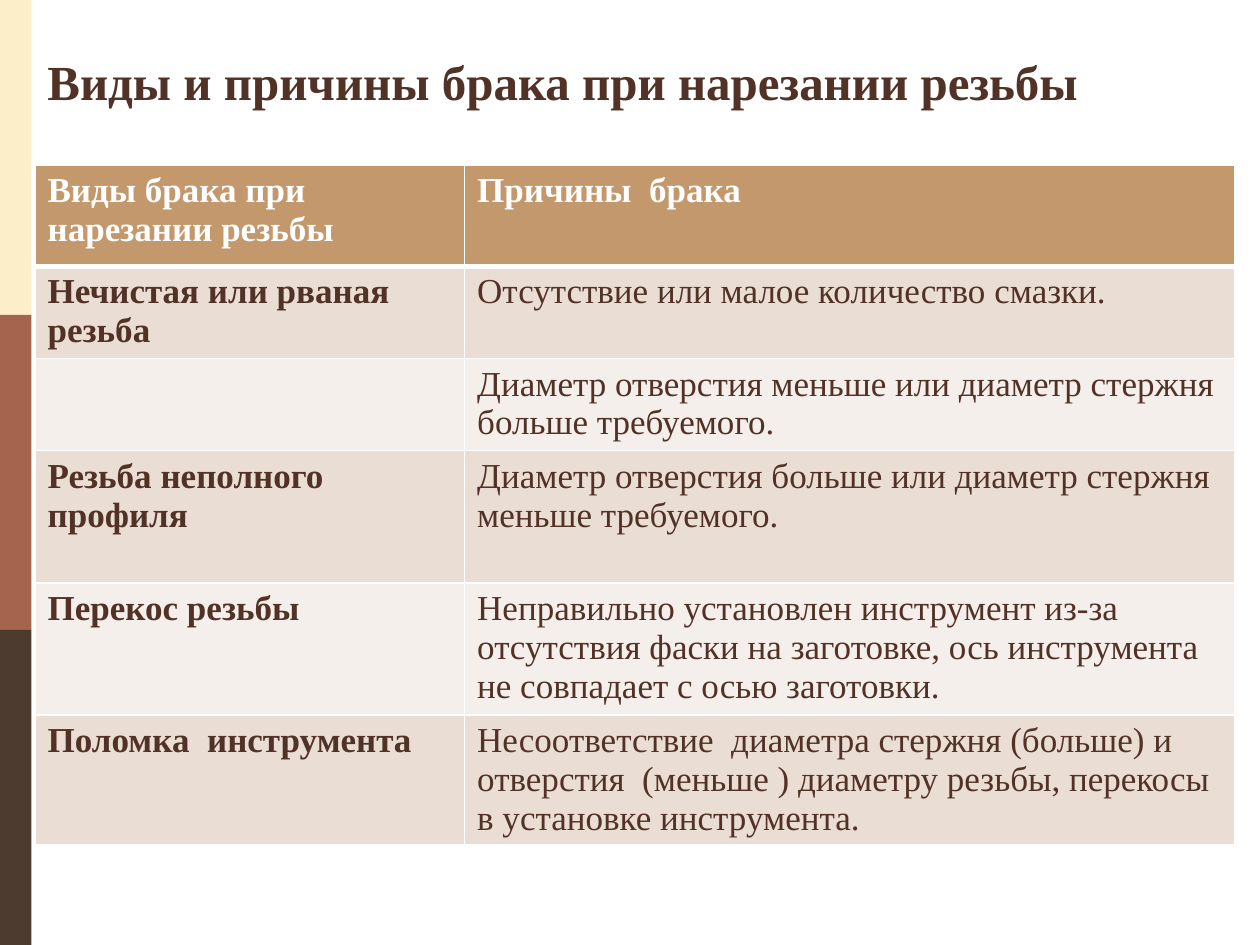
from dataclasses import dataclass

from lxml.etree import SubElement
from pptx import Presentation
from pptx.dml.color import RGBColor
from pptx.enum.shapes import MSO_SHAPE
from pptx.oxml.ns import qn
from pptx.util import Pt


@dataclass(frozen=True)
class Theme:
    """Colours, font and type sizes of the slide."""
    font: str = "Times New Roman"
    title_size: int = 28
    table_size: int = 20
    text: str = "523227"
    white: str = "FFFFFF"
    header: str = "C3986D"
    bands: tuple = ("E9DDD4", "F5EFEB")
    stripes: tuple = ("FBEEC9", "A5644E", "4E3B30")


THEME = Theme()
TITLE = "Виды и причины брака при нарезании резьбы"
COLUMN_WIDTHS = (245.5, 440)
ROW_HEIGHTS = (57.6, 52.7, 52.7, 75.6, 75.6, 73.6)
DEFECTS = (
    ("Виды брака при нарезании резьбы", "Причины  брака"),
    ("Нечистая или рваная резьба", "Отсутствие или малое количество смазки."),
    ("", "Диаметр отверстия меньше или диаметр стержня больше требуемого."),
    ("Резьба неполного профиля",
     "Диаметр отверстия больше или диаметр стержня меньше требуемого."),
    ("Перекос резьбы",
     "Неправильно установлен инструмент из-за отсутствия фаски на заготовке, "
     "ось инструмента не совпадает с осью заготовки."),
    ("Поломка  инструмента",
     "Несоответствие  диаметра стержня (больше) и отверстия  (меньше ) "
     "диаметру резьбы, перекосы в установке инструмента."),
)


def style_text(para, size, color, bold):
    """Set the font of a whole paragraph."""
    para.font.name = THEME.font
    para.font.size = Pt(size)
    para.font.bold = bold
    para.font.color.rgb = RGBColor.from_string(color)


def set_borders(cell, top, bottom):
    """Draw white borders around a cell, with given top and bottom widths."""
    properties = cell._tc.get_or_add_tcPr()
    for side, width in (("L", 1), ("R", 1), ("T", top), ("B", bottom)):
        line = SubElement(properties, qn(f"a:ln{side}"), w=str(Pt(width)))
        fill = SubElement(line, qn("a:solidFill"))
        SubElement(fill, qn("a:srgbClr"), val=THEME.white)


def add_stripes(page, left, top, width, height):
    """Stack equal colour blocks in the given box."""
    block = height / len(THEME.stripes)
    for index, color in enumerate(THEME.stripes):
        stripe = page.shapes.add_shape(
            MSO_SHAPE.RECTANGLE, Pt(left), Pt(top + index * block), Pt(width), Pt(block))
        stripe.shadow.inherit = False
        stripe.fill.solid()
        stripe.fill.fore_color.rgb = RGBColor.from_string(color)
        stripe.line.fill.background()


def add_title(page, left, top, width, height):
    """Place the slide title in the given box."""
    box = page.shapes.add_textbox(Pt(left), Pt(top), Pt(width), Pt(height))
    box.text_frame.word_wrap = True
    para = box.text_frame.paragraphs[0]
    para.text = TITLE
    style_text(para, THEME.title_size, THEME.text, True)


def add_defect_table(page, left, top):
    """Place the table of thread defects and their causes."""
    table = page.shapes.add_table(
        len(DEFECTS), len(COLUMN_WIDTHS), Pt(left), Pt(top),
        Pt(sum(COLUMN_WIDTHS)), Pt(sum(ROW_HEIGHTS))).table
    for column, width in zip(table.columns, COLUMN_WIDTHS):
        column.width = Pt(width)
    for row, height in zip(table.rows, ROW_HEIGHTS):
        row.height = Pt(height)
    for row_index, texts in enumerate(DEFECTS):
        is_header = row_index == 0
        background = THEME.header if is_header else THEME.bands[(row_index - 1) % 2]
        color = THEME.white if is_header else THEME.text
        for column_index, text in enumerate(texts):
            cell = table.cell(row_index, column_index)
            set_borders(cell, 3 if row_index == 1 else 1, 3 if is_header else 1)
            cell.fill.solid()
            cell.fill.fore_color.rgb = RGBColor.from_string(background)
            para = cell.text_frame.paragraphs[0]
            para.text = text
            style_text(para, THEME.table_size, color, is_header or column_index == 0)


def main():
    """Build and save the slide."""
    deck = Presentation()
    deck.slide_width, deck.slide_height = Pt(720), Pt(540)
    page = deck.slides.add_slide(deck.slide_layouts[6])
    add_stripes(page, 0, 0, 18, 540)
    add_defect_table(page, 20, 94.5)
    add_title(page, 20, 26, 635, 41)
    deck.save("out.pptx")


if __name__ == "__main__":
    main()
